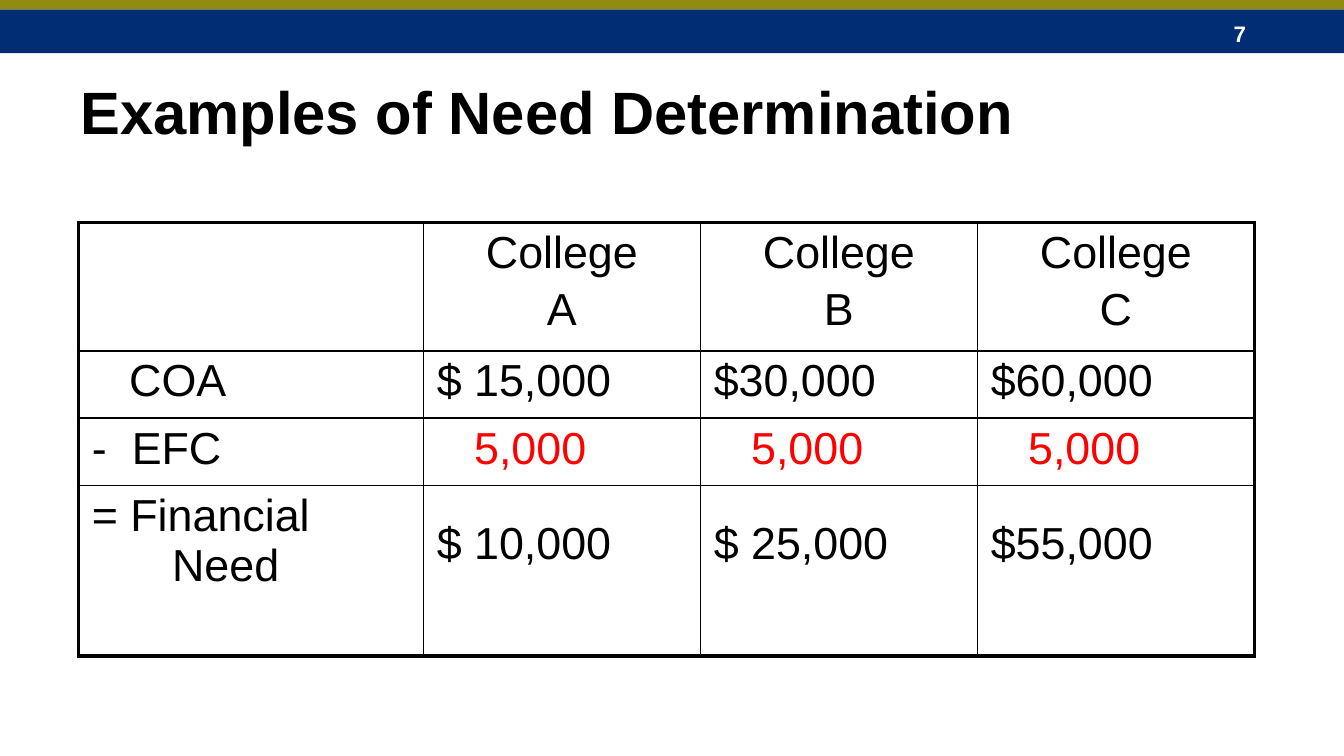
import pptx
import pptx.dml.color
import pptx.enum.shapes
import pptx.enum.text
import pptx.oxml.ns
import pptx.util
from lxml import etree

Pt = pptx.util.Pt
RGB = pptx.dml.color.RGBColor.from_string


class Theme:
    font = "Arial"
    navy, olive = "002D73", "918C10"
    black, white, red = "000000", "FFFFFF", "FF0000"
    title, body, number = 32, 24, 12
    outer, inner = 2.25, 1


def style(p, size, color, bold=False):
    for r in p.runs:
        r.font.name = Theme.font
        r.font.size = Pt(size)
        r.font.bold = bold
        r.font.color.rgb = RGB(color)


def border(cell, side, width):
    tag = pptx.oxml.ns.qn
    ln = etree.SubElement(cell._tc.get_or_add_tcPr(), tag(f"a:ln{side}"), w=str(Pt(width)))
    fill = etree.SubElement(ln, tag("a:solidFill"))
    etree.SubElement(fill, tag("a:srgbClr"), val=Theme.black)


prs = pptx.Presentation()
prs.slide_width, prs.slide_height = Pt(720), Pt(405)
s = prs.slides.add_slide(prs.slide_layouts[6])

# Header bands
for top, height, color in [(5, 23.5, Theme.navy), (-1.5, 6.5, Theme.olive)]:
    sp = s.shapes.add_shape(pptx.enum.shapes.MSO_SHAPE.RECTANGLE, Pt(0), Pt(top), Pt(720), Pt(height))
    sp.shadow.inherit = False
    sp.fill.solid()
    sp.fill.fore_color.rgb = RGB(color)
    sp.line.fill.background()

# Slide number and title
for text, box, size, color in [
    ("7", (653.8, 7.2, 54, 21.6), Theme.number, Theme.white),
    ("Examples of Need Determination", (36, 25.2, 648, 67.7), Theme.title, Theme.black),
]:
    tf = s.shapes.add_textbox(*map(Pt, box)).text_frame
    tf.word_wrap = True
    tf.vertical_anchor = pptx.enum.text.MSO_ANCHOR.MIDDLE
    tf.text = text
    style(tf.paragraphs[0], size, color, bold=True)

# Need table
rows = [
    ["", "College\nA", "College\nB", "College\nC"],
    ["COA", "$ 15,000", "$30,000", "$60,000"],
    ["-\tEFC", "5,000", "5,000", "5,000"],
    ["= Financial\vNeed", "$ 10,000", "$ 25,000", "$55,000"],
]
widths = [184.8, 148.4, 148.4, 148.4]
heights = [68.8, 36, 36, 91.4]
indents = {(1, 0): (20, 0), (2, 0): (21.4, -21.4), (3, 0): (43, -43),
           (2, 1): (20, 0), (2, 2): (20, 0), (2, 3): (20, 0)}
last = len(rows) - 1

table = s.shapes.add_table(len(rows), len(widths), Pt(42), Pt(119.2),
                           Pt(sum(widths)), Pt(sum(heights))).table
table.first_row = table.horz_banding = False
for column, width in zip(table.columns, widths):
    column.width = Pt(width)
for row, height in zip(table.rows, heights):
    row.height = Pt(height)

for i, row in enumerate(rows):
    for j, text in enumerate(row):
        cell = table.cell(i, j)
        cell.margin_left = cell.margin_right = Pt(7.2)
        cell.margin_top = cell.margin_bottom = Pt(2.9)
        if i == last and j > 0:
            cell.margin_top = Pt(17.9)  # amounts sit lower than the row label
        edges = {"L": j == 0, "R": j == last, "T": i == 0, "B": i == last}
        for side, is_outer in edges.items():
            border(cell, side, Theme.outer if is_outer else Theme.inner)
        cell.fill.background()

        cell.text_frame.text = text
        for k, p in enumerate(cell.text_frame.paragraphs):
            if i == 0:
                p.alignment = pptx.enum.text.PP_ALIGN.CENTER
            if k > 0:
                p.space_before = Pt(4)
            if (i, j) in indents:
                left, first = indents[i, j]
                pPr = p._p.get_or_add_pPr()
                pPr.set("marL", str(Pt(left)))
                pPr.set("indent", str(Pt(first)))
            style(p, Theme.body, Theme.red if i == 2 and j > 0 else Theme.black)

prs.save("out.pptx")
